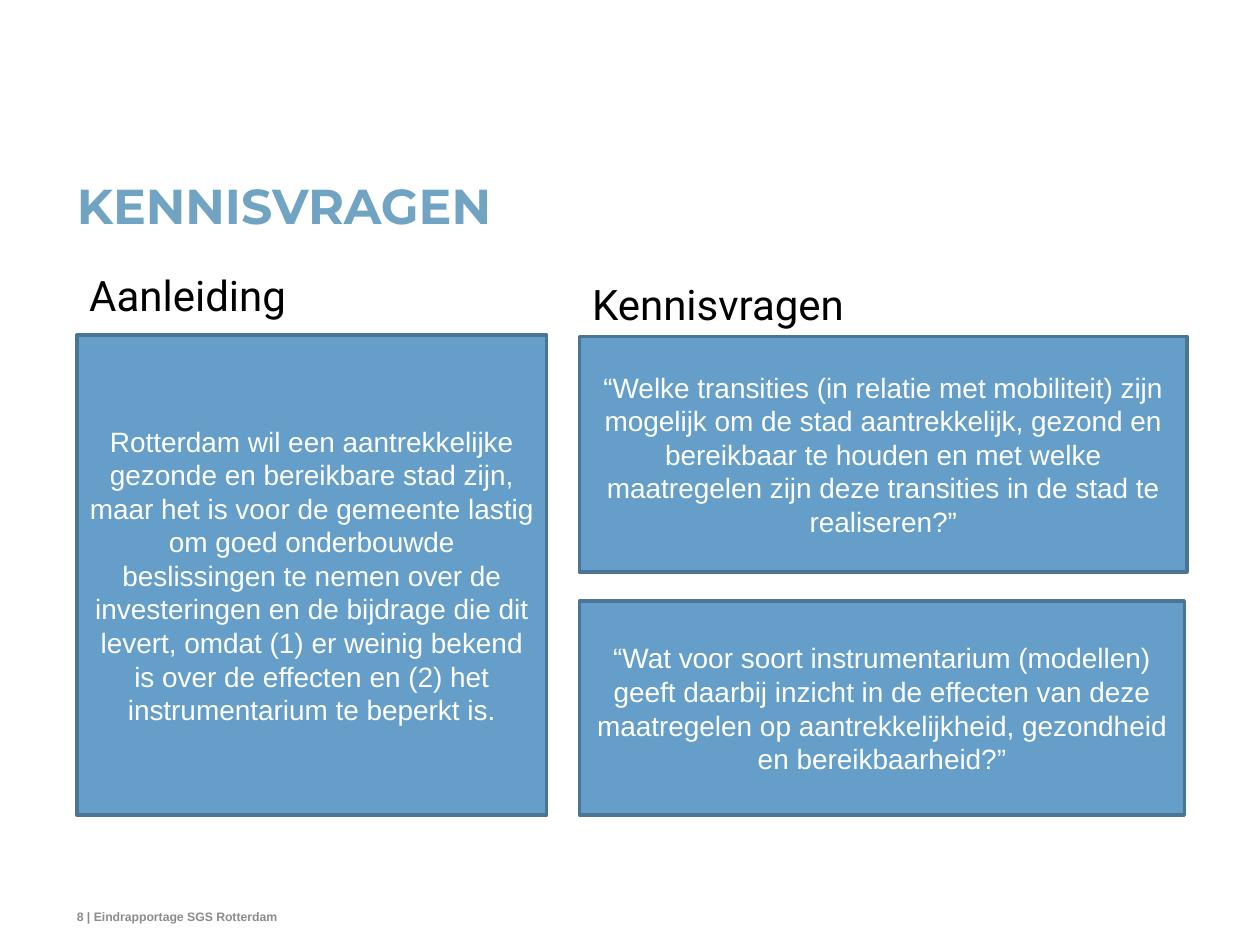
"""Build the Kennisvragen slide with its three text panels."""
from dataclasses import dataclass
from typing import Optional

from pptx import Presentation
from pptx import util as u
from pptx.dml.color import RGBColor
from pptx.enum import shapes, text


@dataclass(frozen=True)
class Style:
    font: str
    size: float
    color: str
    bold: bool = False


@dataclass(frozen=True)
class Theme:
    title: Style = Style("Montserrat", 28, "71A4C3", True)
    heading: Style = Style("Roboto", 24, "000000")
    body: Style = Style("Arial", 16, "FFFFFF")
    footer: Style = Style("Arial", 7, "8C8C8C", True)
    panel_fill: str = "649EC9"
    panel_line: str = "4A7595"
    panel_line_width: float = 2


@dataclass(frozen=True)
class Box:
    left: float
    top: float
    width: float
    height: float

    def lengths(self) -> tuple:
        return tuple(u.Inches(side) for side in (self.left, self.top, self.width, self.height))


@dataclass(frozen=True)
class Item:
    box: Box
    words: str


THEME = Theme()
LEFT, RIGHT = 0.61, 4.6

TITLE = Item(Box(LEFT, 1.47, 8.81, 0.79), "KENNISVRAGEN")
FOOTER = Item(Box(LEFT, 7.14, 4.72, 0.19), "8 | Eindrapportage SGS Rotterdam")
HEADINGS = (
    Item(Box(LEFT, 2.09, 3.15, 0.5), "Aanleiding"),
    Item(Box(RIGHT, 2.16, 3.15, 0.5), "Kennisvragen"),
)
PANELS = (
    Item(Box(LEFT, 2.66, 3.73, 3.81),
         "Rotterdam wil een aantrekkelijke gezonde en bereikbare stad zijn, maar het is voor "
         "de gemeente lastig om goed onderbouwde beslissingen te nemen over de investeringen "
         "en de bijdrage die dit levert, omdat (1) er weinig bekend is over de effecten en "
         "(2) het instrumentarium te beperkt is."),
    Item(Box(RIGHT, 2.67, 4.82, 1.87),
         "“Welke transities (in relatie met mobiliteit) zijn mogelijk om de stad "
         "aantrekkelijk, gezond en bereikbaar te houden en met welke maatregelen zijn deze "
         "transities in de stad te realiseren?”"),
    Item(Box(RIGHT, 4.77, 4.8, 1.7),
         "“Wat voor soort instrumentarium (modellen) geeft daarbij inzicht in de effecten "
         "van deze maatregelen op aantrekkelijkheid, gezondheid en bereikbaarheid?”"),
)


def write(shape, words: str, style: Style, align=text.PP_ALIGN.LEFT,
          anchor=text.MSO_ANCHOR.TOP):
    """Write one styled run into a shape and return its paragraph."""
    frame = shape.text_frame
    frame.word_wrap = True
    frame.vertical_anchor = anchor
    paragraph = frame.paragraphs[0]
    paragraph.alignment = align
    run = paragraph.add_run()
    run.text = words
    run.font.name = style.font
    run.font.size = u.Pt(style.size)
    run.font.bold = style.bold
    run.font.color.rgb = RGBColor.from_string(style.color)
    return paragraph


def add_label(slide, item: Item, style: Style, inset: Optional[float] = None,
              anchor=text.MSO_ANCHOR.TOP):
    """Add a text box, with equal insets when given, and return box and paragraph."""
    shape = slide.shapes.add_textbox(*item.box.lengths())
    paragraph = write(shape, item.words, style, anchor=anchor)
    if inset is not None:
        frame = shape.text_frame
        frame.margin_left = frame.margin_right = u.Inches(inset)
        frame.margin_top = frame.margin_bottom = u.Inches(inset)
    return shape, paragraph


def add_panel(slide, item: Item) -> None:
    """Add a filled rectangle with centred text."""
    shape = slide.shapes.add_shape(shapes.MSO_SHAPE.RECTANGLE, *item.box.lengths())
    shape.shadow.inherit = False
    shape.fill.solid()
    shape.fill.fore_color.rgb = RGBColor.from_string(THEME.panel_fill)
    shape.line.color.rgb = RGBColor.from_string(THEME.panel_line)
    shape.line.width = u.Pt(THEME.panel_line_width)
    write(shape, item.words, THEME.body, text.PP_ALIGN.CENTER, text.MSO_ANCHOR.MIDDLE)


def main() -> None:
    """Build and save the presentation."""
    presentation = Presentation()
    presentation.slide_width, presentation.slide_height = u.Inches(10), u.Inches(7.5)
    slide = presentation.slides.add_slide(presentation.slide_layouts[6])
    _, title = add_label(slide, TITLE, THEME.title, inset=0)
    title.line_spacing = u.Pt(THEME.title.size)
    footer, _ = add_label(slide, FOOTER, THEME.footer, inset=0, anchor=text.MSO_ANCHOR.BOTTOM)
    footer.text_frame.word_wrap = False
    for heading in HEADINGS:
        shape, _ = add_label(slide, heading, THEME.heading)
        shape.text_frame.auto_size = text.MSO_AUTO_SIZE.SHAPE_TO_FIT_TEXT
    for panel in PANELS:
        add_panel(slide, panel)
    presentation.save("out.pptx")


if __name__ == "__main__":
    main()
